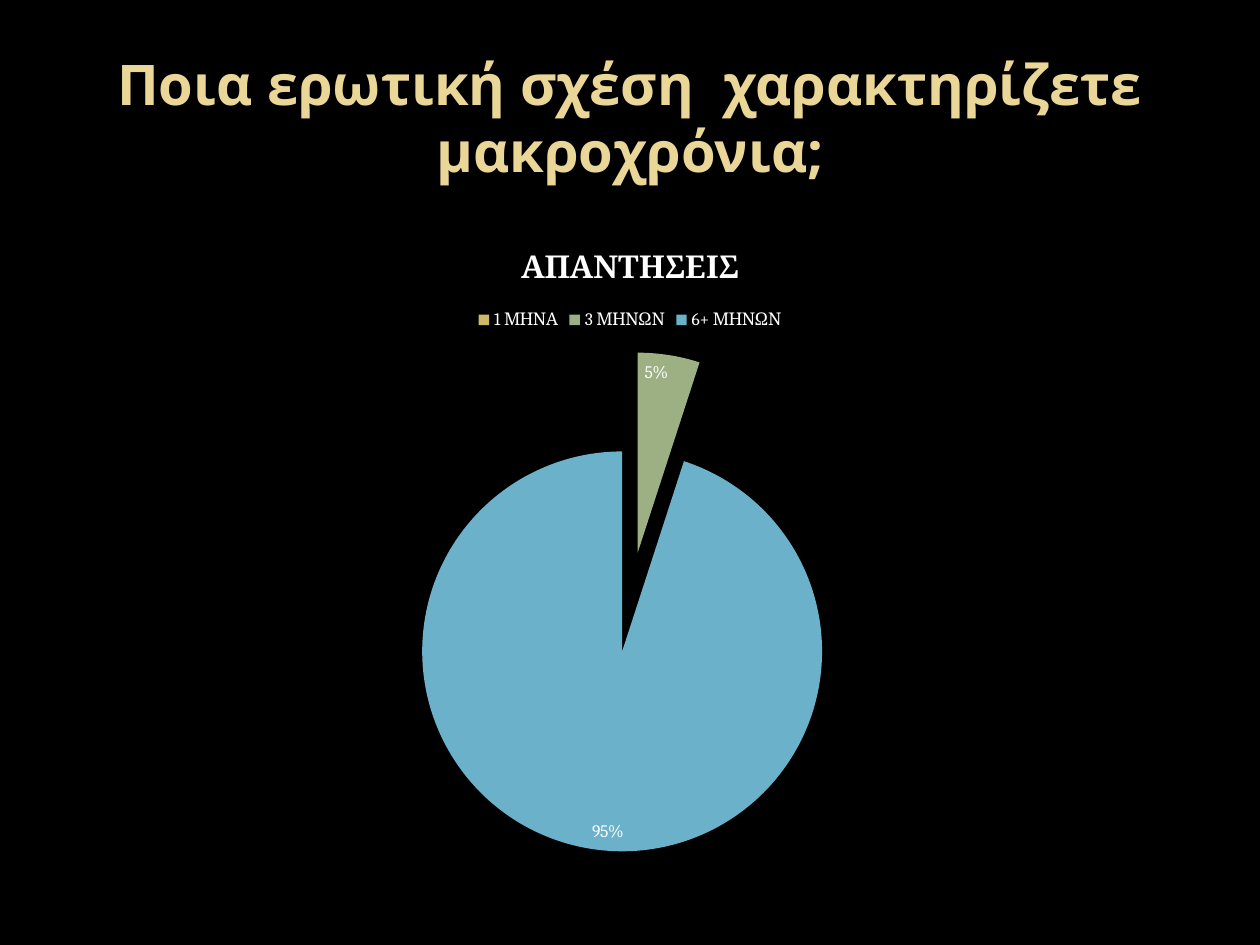
import pptx
import pptx.chart.data
import pptx.dml.color
import pptx.enum.chart
import pptx.enum.text
import pptx.oxml
import pptx.oxml.ns
import pptx.util
from pptx.util import Inches

BLACK = pptx.dml.color.RGBColor(0x00, 0x00, 0x00)
WHITE = pptx.dml.color.RGBColor(0xFF, 0xFF, 0xFF)
SAND = pptx.dml.color.RGBColor(0xEA, 0xD6, 0x96)
GOLD = pptx.dml.color.RGBColor(0xCE, 0xB9, 0x66)
GREEN = pptx.dml.color.RGBColor(0x9C, 0xB0, 0x84)
BLUE = pptx.dml.color.RGBColor(0x6B, 0xB1, 0xC9)


def write_text(text_frame, text, *, font_name, size, color, bold=False):
    text_frame.text = text
    paragraph = text_frame.paragraphs[0]
    paragraph.alignment = pptx.enum.text.PP_ALIGN.CENTER
    font = paragraph.runs[0].font
    font.name = font_name
    font.size = pptx.util.Pt(size)
    font.bold = bold
    font.color.rgb = color


presentation = pptx.Presentation()
presentation.slide_width = Inches(10)
presentation.slide_height = Inches(7.5)
slide = presentation.slides.add_slide(presentation.slide_layouts[6])
slide.background.fill.solid()
slide.background.fill.fore_color.rgb = BLACK

# Title
title_box = slide.shapes.add_textbox(Inches(0.5), Inches(0.3), Inches(9), Inches(1.25))
title_frame = title_box.text_frame
title_frame.word_wrap = True
title_frame.vertical_anchor = pptx.enum.text.MSO_ANCHOR.MIDDLE
write_text(title_frame, "Ποια ερωτική σχέση  χαρακτηρίζετε μακροχρόνια;",
           font_name="Noto Sans", size=32, color=SAND, bold=True)

# Pie chart of the answers
answers = pptx.chart.data.CategoryChartData()
answers.categories = ["1 ΜΗΝΑ", "3 ΜΗΝΩΝ", "6+ ΜΗΝΩΝ"]
answers.add_series("ΑΠΑΝΤΗΣΕΙΣ", [0, 5, 95])
chart = slide.shapes.add_chart(
    pptx.enum.chart.XL_CHART_TYPE.PIE,
    Inches(0.5), Inches(1.75), Inches(9), Inches(5.15), answers).chart
chart.font.name = "Cambria"
chart.font.size = pptx.util.Pt(10)
chart.font.color.rgb = WHITE

chart.has_title = True
write_text(chart.chart_title.text_frame, "ΑΠΑΝΤΗΣΕΙΣ",
           font_name="Cambria", size=18, color=WHITE, bold=True)
chart.chart_title.include_in_layout = False

chart.has_legend = True
chart.legend.position = pptx.enum.chart.XL_LEGEND_POSITION.TOP
chart.legend.include_in_layout = False

# Pull the slices apart; the schema wants the explosion before the points
plot = chart.plots[0]
plot.vary_by_categories = True
series = plot.series[0]
explosion = pptx.oxml.parse_xml(
    f'<c:explosion {pptx.oxml.ns.nsdecls("c")} val="25"/>')
series._element.find(pptx.oxml.ns.qn("c:tx")).addnext(explosion)
for index, color in enumerate([GOLD, GREEN, BLUE]):
    fill = series.points[index].format.fill
    fill.solid()
    fill.fore_color.rgb = color

# The number format leaves the label of an empty slice blank
plot.has_data_labels = True
labels = plot.data_labels
labels.show_value = False
labels.show_percentage = True
labels.number_format = "0%;;"
labels.number_format_is_linked = False
labels.position = pptx.enum.chart.XL_LABEL_POSITION.INSIDE_END
labels.font.name = "Cambria"
labels.font.size = pptx.util.Pt(10)
labels.font.color.rgb = WHITE

presentation.save("out.pptx")
